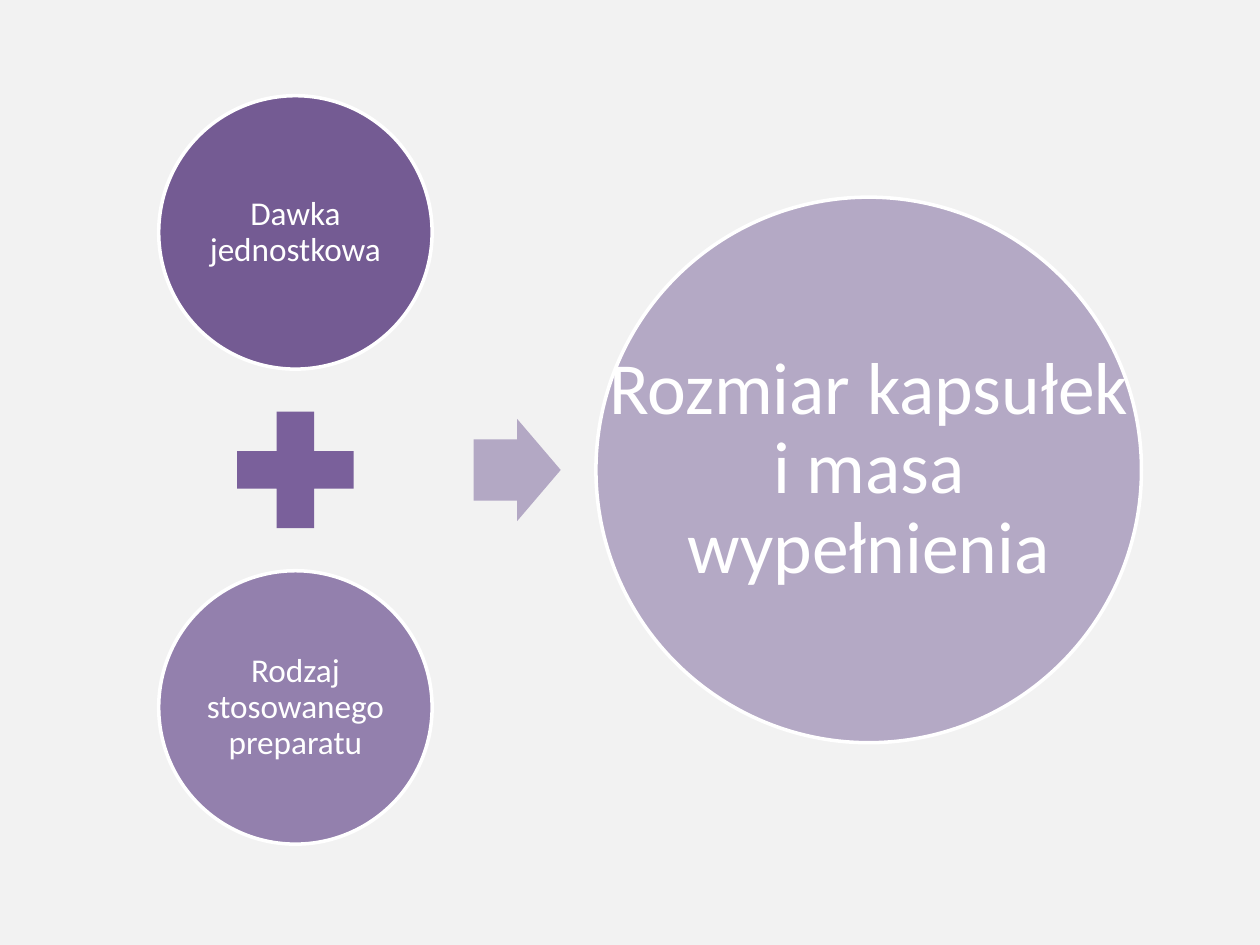
from pptx import Presentation
from pptx.dml.color import RGBColor as Rgb
from pptx.enum.shapes import MSO_SHAPE as Kind
from pptx.enum.text import MSO_ANCHOR as Anchor, PP_ALIGN as Align
from pptx.util import Inches, Pt

HUES = {"back": "F2F2F2", "white": "FFFFFF", "dose": "745B93", "plus": "7A609B",
        "type": "9380AD", "arrow": "B3A8C4", "size": "B4A9C5"}
COLS, ROWS = 100, 75


class Deck:
    """Draws centred shapes and labels on a grid of COLS by ROWS."""

    def __init__(self):
        self.show = Presentation()
        self.show.slide_width, self.show.slide_height = Inches(10), Inches(7.5)
        self.slide = self.show.slides.add_slide(self.show.slide_layouts[6])
        self.paint(self.slide.background.fill, "back")

    def paint(self, fill, hue):
        fill.solid()
        fill.fore_color.rgb = Rgb.from_string(HUES[hue])

    def place(self, x, y, wide, high):
        col, row = self.show.slide_width / COLS, self.show.slide_height / ROWS
        return [round(n) for n in ((x - wide / 2) * col, (y - high / 2) * row,
                                   wide * col, high * row)]

    def shape(self, kind, x, y, wide, high, hue):
        form = self.slide.shapes.add_shape(kind, *self.place(x, y, wide, high))
        form.shadow.inherit = False
        self.paint(form.fill, hue)
        form.line.fill.background()
        return form

    def disc(self, x, y, size, hue):
        form = self.shape(Kind.OVAL, x, y, size, size, hue)
        self.paint(form.line.fill, "white")
        form.line.width = Pt(2)
        return form

    def box(self, x, y, size):
        return self.slide.shapes.add_textbox(*self.place(x, y, size, size))

    def label(self, form, text, size, inset):
        frame = form.text_frame
        frame.word_wrap = True
        frame.vertical_anchor = Anchor.MIDDLE
        frame.margin_left = frame.margin_right = Inches(inset)
        frame.margin_top = frame.margin_bottom = Inches(inset)
        para = frame.paragraphs[0]
        para.text = text
        para.alignment = Align.CENTER
        para.line_spacing = 0.9
        para.font.name, para.font.size = "Calibri", Pt(size)
        para.font.color.rgb = Rgb.from_string(HUES["white"])


def main():
    deck = Deck()
    left, right, mid, gap = 23.45, 68.95, 37.3, 18.85
    parts = [("Dawka jednostkowa", mid - gap, "dose"),
             ("Rodzaj stosowanego preparatu", mid + gap, "type")]
    for text, y, hue in parts:
        deck.label(deck.disc(left, y, 21.7, hue), text, 19, 0.03)
    deck.shape(Kind.MATH_PLUS, left, mid, 12.6, 12.6, "plus")
    arrow = deck.shape(Kind.RIGHT_ARROW, 41.05, mid, 6.9, 8.1, "arrow")
    arrow.adjustments[0] = 0.6
    deck.disc(right, mid, 43.3, "size")
    deck.label(deck.box(right, mid, 43.3), "Rozmiar kapsułek i masa wypełnienia", 42, 0.06)
    deck.show.save("out.pptx")


if __name__ == "__main__":
    main()
